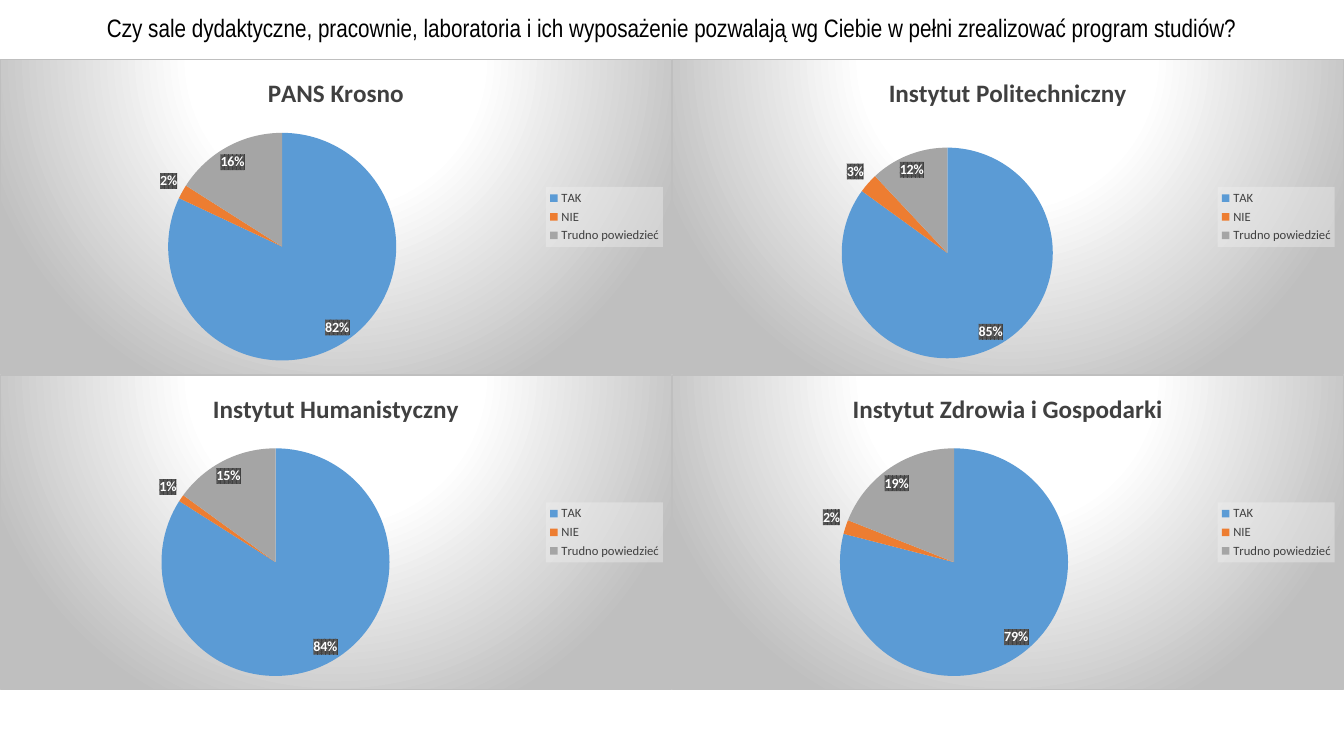
from pptx import Presentation
from pptx.chart.data import CategoryChartData
from pptx.dml.color import RGBColor
from pptx.enum.chart import XL_CHART_TYPE as ChartType, XL_LABEL_POSITION as LabelPosition, XL_LEGEND_POSITION as LegendPosition
from pptx.enum.text import MSO_ANCHOR as Anchor, MSO_AUTO_SIZE as AutoSize, PP_ALIGN as Align
from pptx.oxml import parse_xml
from pptx.oxml.ns import nsdecls, qn
from pptx.util import Cm, Pt

BLACK = RGBColor(0x00, 0x00, 0x00)
WHITE = RGBColor(0xFF, 0xFF, 0xFF)
DARK_GREY = RGBColor(0x40, 0x40, 0x40)
MID_GREY = RGBColor(0x59, 0x59, 0x59)
PALE_GREY = RGBColor(0xF2, 0xF2, 0xF2)
EDGE_GREY = RGBColor(0xBF, 0xBF, 0xBF)
SLICE_COLORS = [RGBColor(0x5B, 0x9B, 0xD5), RGBColor(0xED, 0x7D, 0x31), RGBColor(0xA5, 0xA5, 0xA5)]

CHART_WIDTH = Cm(16.93)
CHART_HEIGHT = Cm(7.95)
CHARTS_TOP = Cm(1.49)
ANSWERS = ["TAK", "NIE", "Trudno powiedzieć"]
INSTITUTES = [
    ("PANS Krosno", (82, 2, 16), (0.25, 0.23, 0.34, 0.73)),
    ("Instytut Politechniczny", (85, 3, 12), (0.25, 0.28, 0.32, 0.67)),
    ("Instytut Humanistyczny", (84, 1, 15), (0.24, 0.23, 0.34, 0.73)),
    ("Instytut Zdrowia i Gospodarki", (79, 2, 19), (0.25, 0.23, 0.34, 0.73)),
]

BACKDROP = f"""<a:gradFill><a:gsLst>
<a:gs pos="0"><a:srgbClr val="{WHITE}"/></a:gs>
<a:gs pos="39000"><a:srgbClr val="{WHITE}"/></a:gs>
<a:gs pos="100000"><a:srgbClr val="{EDGE_GREY}"/></a:gs></a:gsLst>
<a:path path="circle"><a:fillToRect l="50000" t="-80000" r="50000" b="180000"/></a:path></a:gradFill>
<a:ln w="9525"><a:solidFill><a:srgbClr val="{EDGE_GREY}"/></a:solidFill></a:ln>"""
LEGEND_FILL = f'<a:solidFill><a:srgbClr val="{PALE_GREY}"><a:alpha val="39000"/></a:srgbClr></a:solidFill>'
LABEL_FILL = f"""<a:pattFill prst="pct75"><a:fgClr><a:srgbClr val="{DARK_GREY}"/></a:fgClr>
<a:bgClr><a:srgbClr val="{MID_GREY}"/></a:bgClr></a:pattFill>"""


def set_font(font, name, size, color, bold=False):
    font.name = name
    font.size = Pt(size)
    font.bold = bold
    font.color.rgb = color


def add_fill(parent, fill):
    properties = parse_xml(f'<c:spPr {nsdecls("c", "a")}>{fill}</c:spPr>')
    parent.find(qn("c:txPr")).addprevious(properties)


deck = Presentation()
deck.slide_width = Cm(33.87)
deck.slide_height = Cm(19.05)
page = deck.slides.add_slide(deck.slide_layouts[5])

title = page.shapes.title
title.left, title.top, title.width, title.height = 0, 0, deck.slide_width, CHARTS_TOP
title.text_frame.text = "Czy sale dydaktyczne, pracownie, laboratoria i ich wyposażenie pozwalają wg Ciebie w pełni zrealizować program studiów?"
title.text_frame.auto_size = AutoSize.NONE
title.text_frame.vertical_anchor = Anchor.MIDDLE
para = title.text_frame.paragraphs[0]
para.alignment = Align.CENTER
para.line_spacing = 0.9
set_font(para.font, "Arial Narrow", 18, BLACK)

for index, (institute, shares, plot_area) in enumerate(INSTITUTES):
    row, column = divmod(index, 2)
    data = CategoryChartData()
    data.categories = ANSWERS
    data.add_series("Series 1", shares)
    chart = page.shapes.add_chart(
        ChartType.PIE, column * CHART_WIDTH, CHARTS_TOP + row * CHART_HEIGHT, CHART_WIDTH, CHART_HEIGHT, data
    ).chart
    set_font(chart.font, "Calibri", 10, BLACK)
    add_fill(chart.element, BACKDROP)

    chart.has_title = True
    chart.chart_title.include_in_layout = False
    chart.chart_title.text_frame.text = institute
    set_font(chart.chart_title.text_frame.paragraphs[0].font, "Calibri", 18, DARK_GREY, True)

    chart.has_legend = True
    chart.legend.position = LegendPosition.RIGHT
    chart.legend.include_in_layout = False
    set_font(chart.legend.font, "Calibri", 9, DARK_GREY)
    add_fill(chart.element.find(".//" + qn("c:legend")), LEGEND_FILL)

    chart.plots[0].vary_by_categories = True
    series = chart.plots[0].series[0]
    for number, color in enumerate(SLICE_COLORS):
        slice_fill = series.points[number].format.fill
        slice_fill.solid()
        slice_fill.fore_color.rgb = color

    labels = series.data_labels
    labels.show_percentage = True
    labels.show_value = False
    labels.number_format = "0%"
    labels.number_format_is_linked = False
    labels.position = LabelPosition.BEST_FIT
    set_font(labels.font, "Calibri", 10, WHITE, True)
    add_fill(chart.element.find(".//" + qn("c:ser")).find(qn("c:dLbls")), LABEL_FILL)

    plot = chart.element.find(".//" + qn("c:plotArea"))
    for layout in plot.findall(qn("c:layout")):
        plot.remove(layout)
    sizes = "".join(f'<c:{side} val="{share}"/>' for side, share in zip("xywh", plot_area))
    plot.insert(0, parse_xml(
        f'<c:layout {nsdecls("c")}><c:manualLayout><c:layoutTarget val="inner"/>'
        f'<c:xMode val="edge"/><c:yMode val="edge"/>{sizes}</c:manualLayout></c:layout>'
    ))

deck.save("out.pptx")
